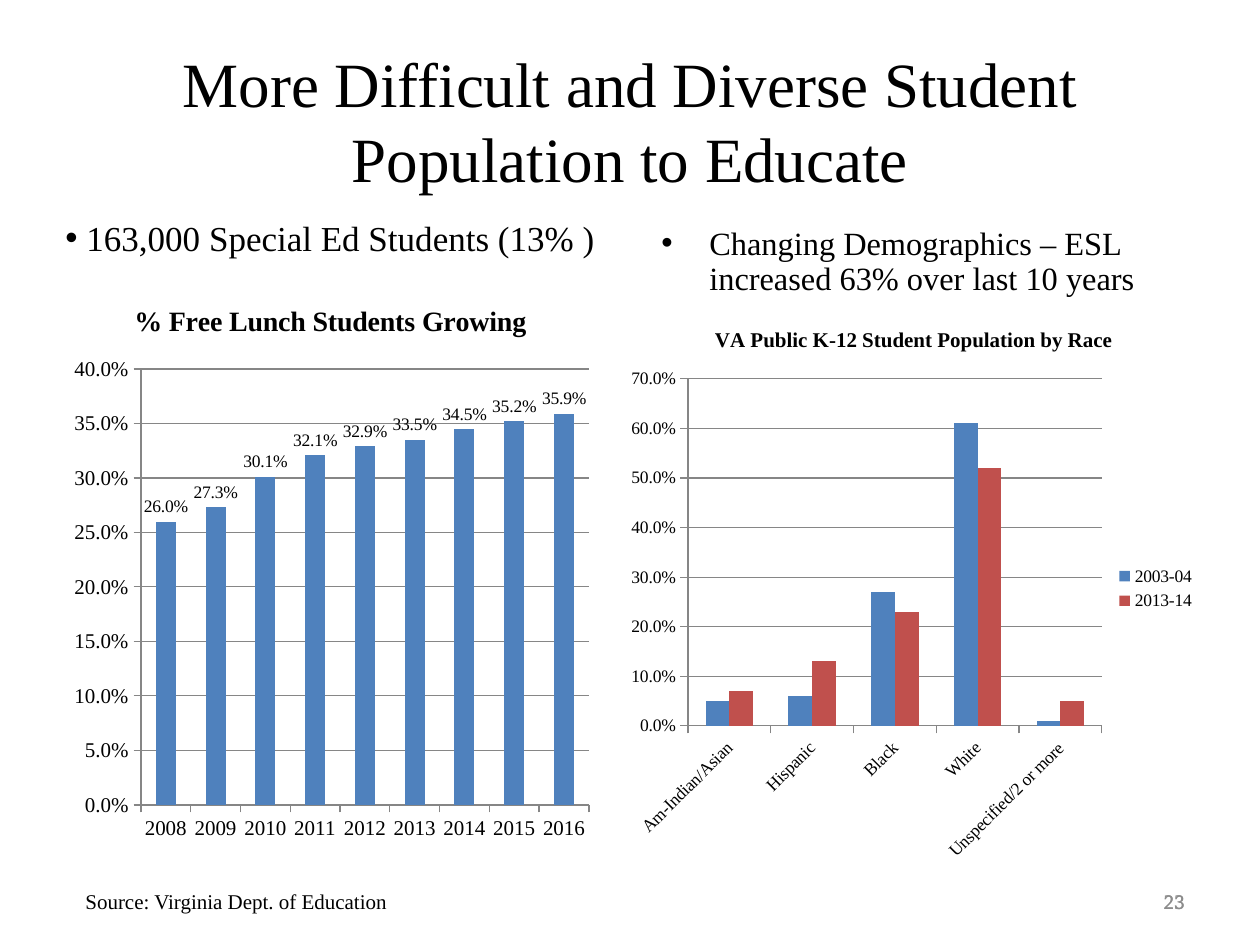
from dataclasses import dataclass

from lxml import etree
from pptx import Presentation
from pptx.chart.data import CategoryChartData
from pptx.dml.color import RGBColor
from pptx.enum.chart import XL_CHART_TYPE, XL_LABEL_POSITION, XL_LEGEND_POSITION, XL_TICK_MARK
from pptx.enum.text import MSO_ANCHOR, PP_ALIGN
from pptx.oxml import parse_xml
from pptx.oxml.ns import nsdecls, qn
from pptx.util import Emu, Pt

COLUMNS = XL_CHART_TYPE.COLUMN_CLUSTERED
LABEL_ABOVE = XL_LABEL_POSITION.OUTSIDE_END
LEGEND_RIGHT = XL_LEGEND_POSITION.RIGHT
TICK_OUTSIDE = XL_TICK_MARK.OUTSIDE
LEFT, CENTER, RIGHT = PP_ALIGN.LEFT, PP_ALIGN.CENTER, PP_ALIGN.RIGHT
TOP, MIDDLE = MSO_ANCHOR.TOP, MSO_ANCHOR.MIDDLE
PX_PER_INCH = 126


@dataclass(frozen=True)
class Theme:
    font: str = "Times New Roman"
    number_font: str = "Calibri"
    ink: str = "000000"
    muted: str = "8C8C8C"
    grid: str = "868686"
    series: tuple = ("4F81BD", "C0504D")
    title: float = 36
    bullet: float = 20
    small_bullet: float = 18.5
    chart_title: float = 16
    small: float = 12
    tiny: float = 10


THEME = Theme()


def px(length):
    return Emu(round(length * 914400 / PX_PER_INCH))


def place(shape, at):
    shape.left, shape.top, shape.width, shape.height = map(px, at)


def format_font(font, size, color=THEME.ink, name=THEME.font, bold=False):
    font.name, font.size, font.bold = name, Pt(size), bold
    font.color.rgb = RGBColor.from_string(color)


def write_text(frame, text, size, color=THEME.ink, name=THEME.font, align=LEFT,
               anchor=TOP, wrap=True, bullet=False, indent=0, spacing=None, before=0):
    frame.word_wrap = wrap
    frame.vertical_anchor = anchor
    para = frame.paragraphs[0]
    para.alignment = align
    para.line_spacing = spacing
    para.space_before = Pt(before)
    span = para.add_run()
    span.text = text
    format_font(span.font, size, color, name)
    if bullet:
        props = para._p.get_or_add_pPr()
        props.set("marL", str(px(indent)))
        props.set("indent", str(-px(indent)))
        etree.SubElement(props, qn("a:buFont")).set("typeface", "Arial")
        etree.SubElement(props, qn("a:buChar")).set("char", "•")


def add_title(page, text, at):
    place(page.shapes.title, at)
    write_text(page.shapes.title.text_frame, text, THEME.title, align=CENTER)


def add_text(page, text, at, size, **style):
    box = page.shapes.add_textbox(*map(px, at))
    write_text(box.text_frame, text, size, **style)


def set_plot_area(chart, at, plot):
    left, top, width, height = at
    shares = {
        "x": (plot[0] - left) / width,
        "y": (plot[1] - top) / height,
        "w": plot[2] / width,
        "h": plot[3] / height,
    }
    values = "".join(f'<c:{key} val="{share:.4f}"/>' for key, share in shares.items())
    layout = parse_xml(
        f'<c:layout {nsdecls("c")}><c:manualLayout><c:layoutTarget val="inner"/>'
        f'<c:xMode val="edge"/><c:yMode val="edge"/>{values}</c:manualLayout></c:layout>'
    )
    area = chart._chartSpace.chart.plotArea
    for old in area.findall(qn("c:layout")):
        area.remove(old)
    area.insert(0, layout)


def format_axis(axis, size):
    format_font(axis.tick_labels.font, size)
    axis.major_tick_mark = TICK_OUTSIDE
    axis.format.line.color.rgb = RGBColor.from_string(THEME.grid)
    axis.format.line.width = Pt(0.75)


def add_columns(page, title, at, plot, categories, series, top, step, size, title_size,
                labels=False, legend=False, rotation=0):
    data = CategoryChartData(number_format="0.0%")
    data.categories = categories
    for name, values in series.items():
        data.add_series(name, values)
    chart = page.shapes.add_chart(COLUMNS, *map(px, at), data).chart
    format_font(chart.font, size)

    chart.has_title = True
    frame = chart.chart_title.text_frame
    frame.text = title
    format_font(frame.paragraphs[0].runs[0].font, title_size, bold=True)
    chart.chart_title.include_in_layout = False
    set_plot_area(chart, at, plot)

    format_axis(chart.category_axis, size)
    if rotation:
        body = chart.category_axis._element.find(qn("c:txPr")).find(qn("a:bodyPr"))
        body.set("rot", str(rotation * 60000))
        body.set("vert", "horz")
    axis = chart.value_axis
    format_axis(axis, size)
    axis.minimum_scale, axis.maximum_scale, axis.major_unit = 0, top, step
    axis.tick_labels.number_format = "0.0%"
    axis.tick_labels.number_format_is_linked = False
    axis.major_gridlines.format.line.color.rgb = RGBColor.from_string(THEME.grid)
    axis.major_gridlines.format.line.width = Pt(0.75)

    bars = chart.plots[0]
    bars.gap_width, bars.overlap, bars.vary_by_categories = 150, 0, False
    for one, color in zip(bars.series, THEME.series):
        one.format.fill.solid()
        one.format.fill.fore_color.rgb = RGBColor.from_string(color)
    if labels:
        bars.has_data_labels = True
        bars.data_labels.show_value = True
        bars.data_labels.position = LABEL_ABOVE
        bars.data_labels.number_format = "0.0%"
        bars.data_labels.number_format_is_linked = False
        format_font(bars.data_labels.font, THEME.tiny)
    chart.has_legend = legend
    if legend:
        chart.legend.position = LEGEND_RIGHT
        chart.legend.include_in_layout = False
        format_font(chart.legend.font, size)


def main():
    deck = Presentation()
    deck.slide_width, deck.slide_height = px(1260), px(945)
    page = deck.slides.add_slide(deck.slide_layouts[5])

    add_title(page, "More Difficult and Diverse Student Population to Educate",
              (63, 38, 1134, 158))
    add_text(page, "Changing Demographics – ESL increased 63% over last 10 years",
             (649, 221, 557, 88), THEME.small_bullet, bullet=True, indent=48,
             spacing=0.9, before=4)
    for name in (THEME.number_font, THEME.font):
        add_text(page, "23", (903, 876, 294, 50), THEME.small, color=THEME.muted,
                 name=name, align=RIGHT, anchor=MIDDLE)
    add_columns(
        page, "VA Public K-12 Student Population by Race",
        (620, 305, 588, 567), (688, 379, 414, 347),
        ["Am-Indian/Asian", "Hispanic", "Black", "White", "Unspecified/2 or more"],
        {"2003-04": (0.05, 0.06, 0.27, 0.61, 0.01),
         "2013-14": (0.07, 0.13, 0.23, 0.52, 0.05)},
        top=0.7, step=0.1, size=THEME.tiny, title_size=THEME.small,
        legend=True, rotation=-45)
    add_text(page, " 163,000 Special Ed Students (13% )", (53, 210, 558, 55),
             THEME.bullet, wrap=False, bullet=True)
    add_text(page, "Source: Virginia Dept. of Education", (73, 882, 331, 38),
             THEME.small, wrap=False)
    add_columns(
        page, "% Free Lunch Students Growing",
        (63, 280, 535, 571), (141, 369, 448, 436),
        [str(year) for year in range(2008, 2017)],
        {"Series 1": (0.26, 0.273, 0.301, 0.321, 0.329, 0.335, 0.345, 0.352, 0.359)},
        top=0.4, step=0.05, size=THEME.small, title_size=THEME.chart_title, labels=True)

    deck.save("out.pptx")


if __name__ == "__main__":
    main()
